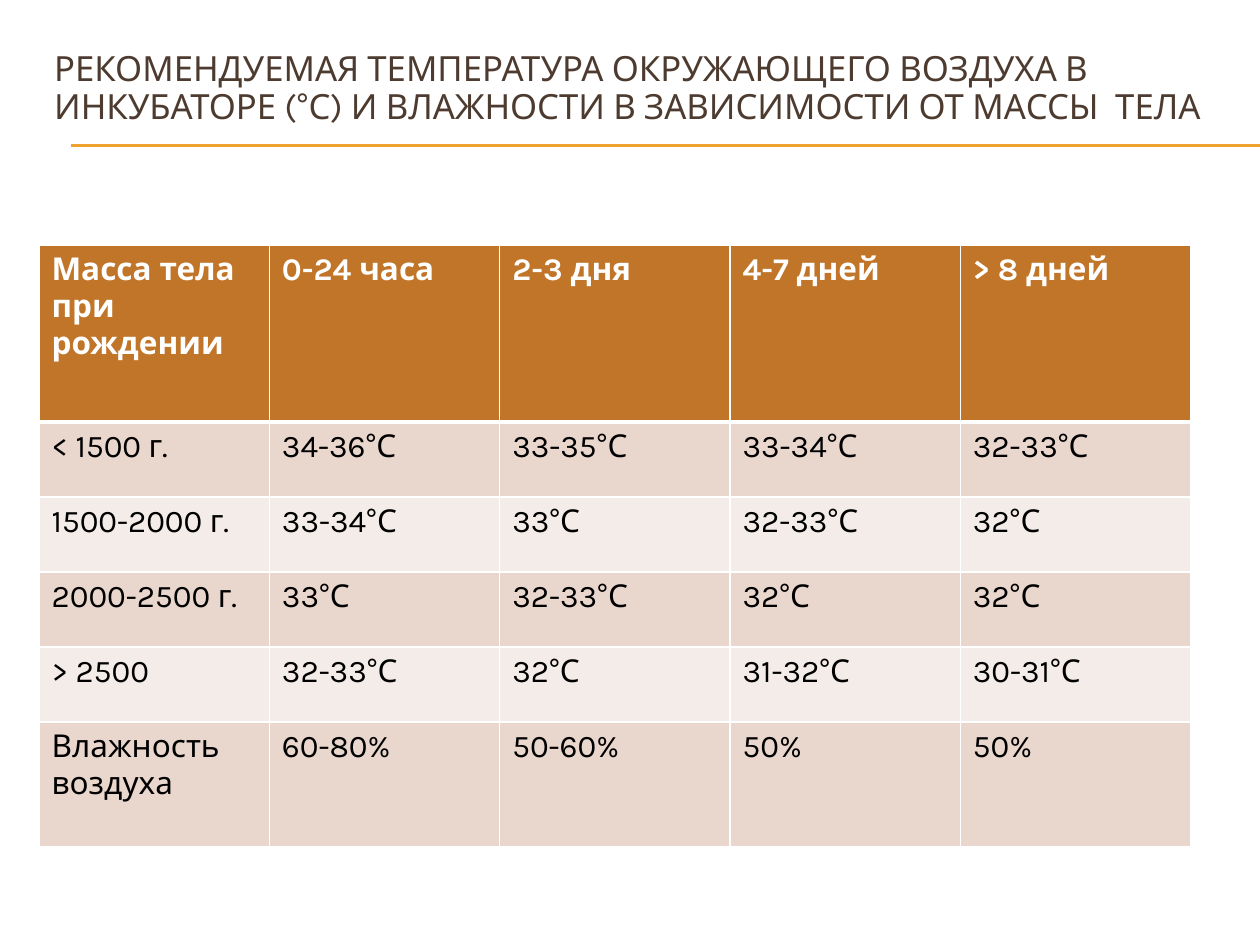
from lxml import etree
from pptx import Presentation
from pptx.dml.color import RGBColor
from pptx.enum import shapes, text
from pptx.oxml import ns
from pptx.util import Inches, Pt

THEME = {
    "font": "Karla",
    "title": "4E3B30", "rule": "F0A22E",
    "header": "C17529", "bands": ("E9D6CD", "F4ECE8"),
    "light": "FFFFFF", "dark": "000000",
    "title_size": 19.8, "cell_size": 18,
}


def add_text(paragraph, words, size, color, bold=False):
    run = paragraph.add_run()
    run.text = words
    run.font.name = THEME["font"]
    run.font.size = Pt(size)
    run.font.bold = bold
    run.font.color.rgb = RGBColor.from_string(color)


def add_borders(cell, **widths):
    """Draw cell borders; the line elements go before the fill."""
    properties = cell._tc.get_or_add_tcPr()
    for index, (side, width) in enumerate(widths.items()):
        line = etree.Element(ns.qn(f"a:ln{side}"), w=str(Pt(width)))
        fill = etree.SubElement(line, ns.qn("a:solidFill"))
        etree.SubElement(fill, ns.qn("a:srgbClr"), val=THEME["light"])
        properties.insert(index, line)


prs = Presentation()
prs.slide_width, prs.slide_height = Inches(10), Inches(7.5)
slide = prs.slides.add_slide(prs.slide_layouts[5])

# Title, raised above the rule by its bottom inset
title = slide.shapes.title
title.left, title.top = Inches(0.33), Inches(0.5)
title.width, title.height = Inches(9.5), Inches(0.92)
heading = title.text_frame
heading.word_wrap = True
heading.auto_size = text.MSO_AUTO_SIZE.NONE
heading.vertical_anchor = text.MSO_ANCHOR.MIDDLE
heading.margin_bottom = Inches(0.55)
heading_line = heading.paragraphs[0]
heading_line.alignment = text.PP_ALIGN.LEFT
heading_line.line_spacing = 0.9
add_text(heading_line,
         "РЕКОМЕНДУЕМАЯ ТЕМПЕРАТУРА ОКРУЖАЮЩЕГО ВОЗДУХА В ИНКУБАТОРЕ (°С) "
         "И ВЛАЖНОСТИ В ЗАВИСИМОСТИ ОТ МАССЫ  ТЕЛА",
         THEME["title_size"], THEME["title"])

# Double rule under the title
for y in (1.15, 1.16):
    rule = slide.shapes.add_connector(
        shapes.MSO_CONNECTOR.STRAIGHT, Inches(0.56), Inches(y), Inches(10), Inches(y))
    rule.line.color.rgb = RGBColor.from_string(THEME["rule"])
    rule.line.width = Pt(0.75)
    etree.SubElement(rule._element.spPr, ns.qn("a:effectLst"))

# Temperature and humidity by body mass and age
incubator_rows = [
    ("Масса тела при рождении", "0-24 часа", "2-3 дня", "4-7 дней", "> 8 дней"),
    ("< 1500 г.", "34-36°С", "33-35°С", "33-34°С", "32-33°С"),
    ("1500-2000 г.", "33-34°С", "33°С", "32-33°С", "32°С"),
    ("2000-2500 г.", "33°С", "32-33°С", "32°С", "32°С"),
    ("> 2500", "32-33°С", "32°С", "31-32°С", "30-31°С"),
    ("Влажность воздуха", "60-80%", "50-60%", "50%", "50%"),
]
row_heights = [1.4] + [0.595] * 4 + [0.99]
incubator = slide.shapes.add_table(
    len(incubator_rows), len(incubator_rows[0]), Inches(0.31), Inches(1.95),
    Inches(9.14), Inches(sum(row_heights))).table
for column in incubator.columns:
    column.width = Inches(9.14 / len(incubator.columns))

for r, (values, height) in enumerate(zip(incubator_rows, row_heights)):
    incubator.rows[r].height = Inches(height)
    is_header = r == 0
    fill_color = THEME["header"] if is_header else THEME["bands"][(r - 1) % 2]
    for c, value in enumerate(values):
        cell = incubator.cell(r, c)
        cell.fill.solid()
        cell.fill.fore_color.rgb = RGBColor.from_string(fill_color)
        add_borders(cell, L=1, R=1, T=3 if r == 1 else 1, B=3 if is_header else 1)
        add_text(cell.text_frame.paragraphs[0], value, THEME["cell_size"],
                 THEME["light"] if is_header else THEME["dark"], is_header)

prs.save("out.pptx")
